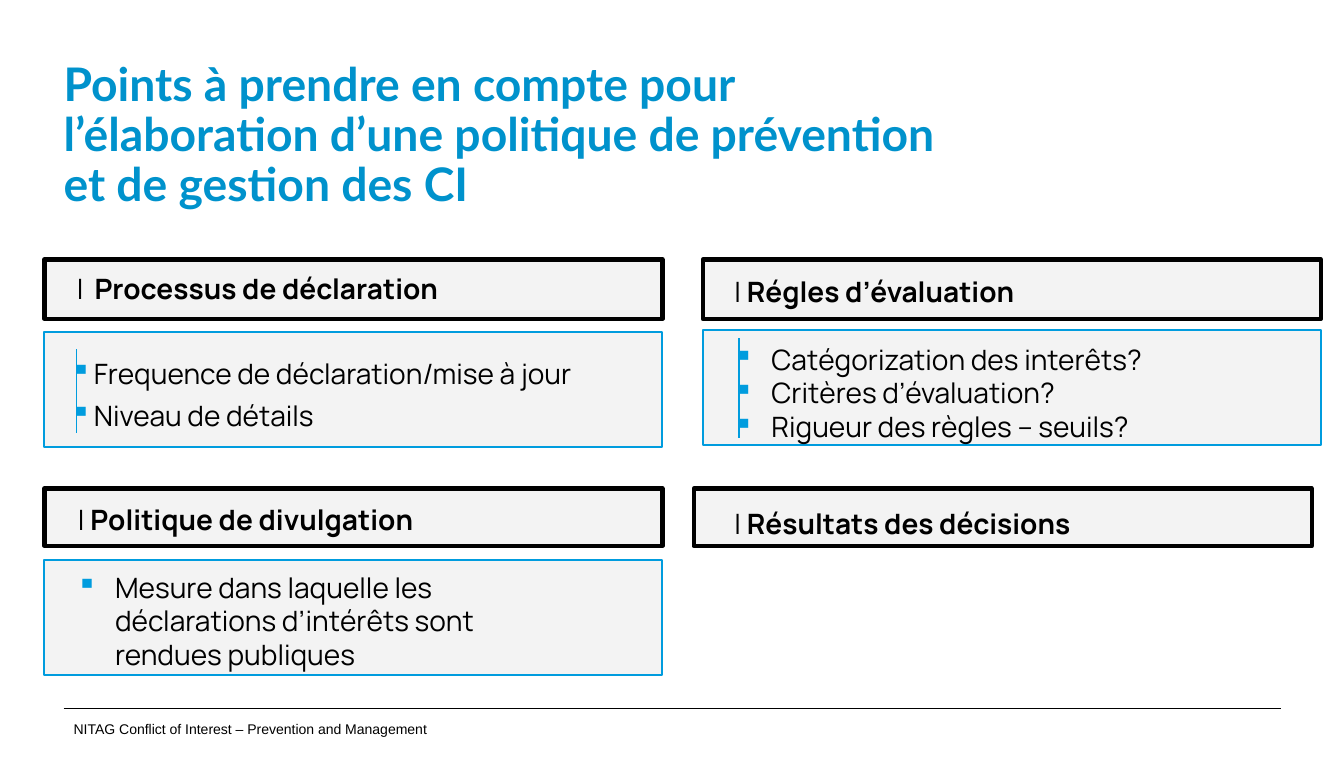
from lxml import etree
from pptx import Presentation
from pptx.dml.color import RGBColor
from pptx.enum.shapes import MSO_CONNECTOR, MSO_SHAPE
from pptx.oxml.ns import qn
from pptx.util import Inches, Pt

RECTANGLE = MSO_SHAPE.RECTANGLE
STRAIGHT = MSO_CONNECTOR.STRAIGHT
COLORS = {"panel": "F3F3F3", "accent": "009CDE", "title": "0092CC", "ink": "000000"}

deck = Presentation()
deck.slide_width, deck.slide_height = Inches(13.31), Inches(7.52)
slide = deck.slides.add_slide(deck.slide_layouts[6])


def color(name):
    return RGBColor.from_string(COLORS[name])


def add_text(paragraphs, left, top, width, height, size=20, font="Manrope",
             ink="ink", bold=False, spacing=None, before=0, indent=None, tracking=0):
    frame = slide.shapes.add_textbox(
        Inches(left), Inches(top), Inches(width), Inches(height)).text_frame
    frame.word_wrap = True
    frame.margin_left = frame.margin_right = frame.margin_top = frame.margin_bottom = 0
    for number, pieces in enumerate(paragraphs):
        paragraph = frame.paragraphs[0] if number == 0 else frame.add_paragraph()
        if spacing:
            paragraph.line_spacing = spacing
        if number and before:
            paragraph.space_before = Pt(before)
        if indent:
            properties = paragraph._p.get_or_add_pPr()
            properties.set("marL", str(Inches(indent)))
            properties.set("indent", str(-Inches(indent)))
            tint = etree.SubElement(properties, qn("a:buClr"))
            etree.SubElement(tint, qn("a:srgbClr"), val=COLORS["accent"])
            etree.SubElement(properties, qn("a:buChar"), char="▪")
        for position, piece in enumerate(pieces):
            run = paragraph.add_run()
            run.text = piece
            run.font.name = font
            run.font.size = Pt(size)
            run.font.bold = bold or position > 0
            run.font.color.rgb = color(ink)
            if tracking and position == 0:
                run._r.get_or_add_rPr().set("spc", str(tracking))


detail_panels = [(0.44, 3.29), (6.96, 3.27), (0.44, 5.55)]
heading_panels = [(0.44, 4.84, 0.57), (6.87, 4.84, 0.57), (0.44, 2.57, 0.59), (6.96, 2.57, 0.59)]
panels = [(left, top, 1.14, "accent", 1.5) for left, top in detail_panels]
panels += [(left, top, height, "ink", 3) for left, top, height in heading_panels]
for left, top, height, outline, weight in panels:
    panel = slide.shapes.add_shape(
        RECTANGLE, Inches(left), Inches(top), Inches(6.12), Inches(height))
    panel.shadow.inherit = False
    panel.fill.solid()
    panel.fill.fore_color.rgb = color("panel")
    panel.line.color.rgb = color(outline)
    panel.line.width = Pt(weight)

add_text([["Points à prendre en compte pour l’élaboration d’une politique de prévention et de gestion des CI"]],
         0.63, 0.61, 9.15, 1.5, size=33, font="Lato", ink="title", bold=True, spacing=0.9)

headings = [
    ("Processus de déclaration", 0.76, 2.69, 180),
    ("Régles d’évaluation", 7.27, 2.72, 0),
    ("Politique de divulgation", 0.77, 4.98, 0),
    ("Résultats des décisions", 7.27, 5.02, 0),
]
for heading, left, top, tracking in headings:
    add_text([["| ", heading]], left, top, 5, 0.34, tracking=tracking)

details = [
    (["Frequence de déclaration/mise à jour", "Niveau de détails"], 0.7, 3.53, 5.8, 0.23, 6),
    (["Catégorization des interêts?", "Critères d’évaluation?", "Rigueur des règles – seuils?"],
     7.26, 3.39, 5.7, 0.38, 0),
    (["Mesure dans laquelle les déclarations d’intérêts sont rendues publiques"],
     0.76, 5.65, 4.9, 0.38, 0),
]
for points, left, top, width, indent, before in details:
    add_text([[point] for point in points], left, top, width, 1, indent=indent, before=before)

add_text([["NITAG Conflict of Interest – Prevention and Management"]],
         0.73, 7.14, 8.07, 0.17, size=10, font="Arial")

rules = [
    (0.63, 7.02, 12.69, 7.02, "ink", 0.75),
    (7.32, 3.35, 7.32, 4.34, "accent", 1.5),
    (0.76, 3.46, 0.76, 4.29, "accent", 0.5),
]
for x1, y1, x2, y2, tone, weight in rules:
    rule = slide.shapes.add_connector(STRAIGHT, Inches(x1), Inches(y1), Inches(x2), Inches(y2))
    rule.line.color.rgb = color(tone)
    rule.line.width = Pt(weight)
    etree.SubElement(rule._element.spPr, qn("a:effectLst"))

deck.save("out.pptx")
